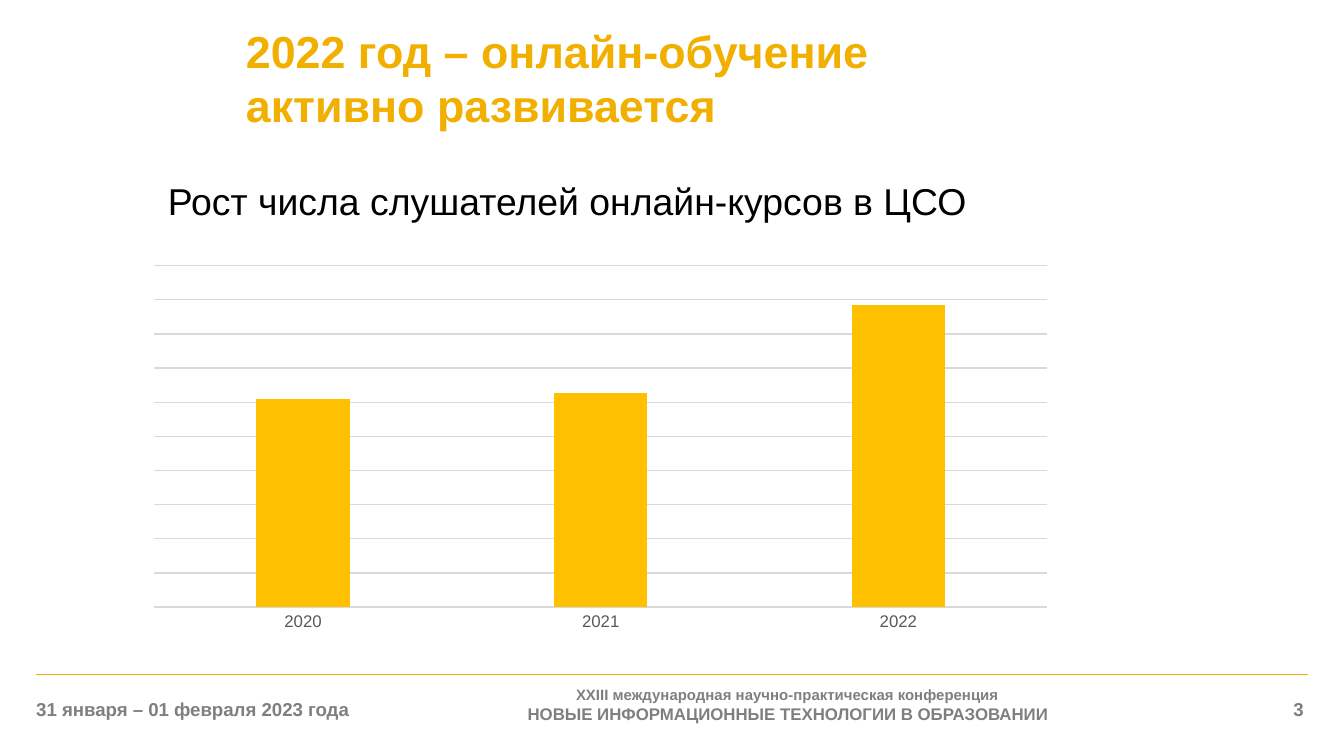
"""Build the slide on the growth of online course audiences."""
from dataclasses import dataclass

import pptx
import pptx.chart.data
import pptx.dml.color
import pptx.enum.chart
import pptx.enum.shapes
import pptx.enum.text
import pptx.oxml
import pptx.util
from pptx.util import Inches, Pt

RGBColor = pptx.dml.color.RGBColor
Align = pptx.enum.text.PP_ALIGN
Anchor = pptx.enum.text.MSO_ANCHOR

GOLD = RGBColor(0xF1, 0xAF, 0x00)
AMBER = RGBColor(0xFF, 0xC0, 0x00)
BLACK = RGBColor(0x00, 0x00, 0x00)
GRAY = RGBColor(0x7F, 0x7F, 0x7F)
AXIS_TEXT = RGBColor(0x59, 0x59, 0x59)
GRID = RGBColor(0xD9, 0xD9, 0xD9)
FONT = "Arial"


@dataclass(frozen=True)
class Label:
    text: str
    box: tuple[float, float, float, float]
    sizes: tuple[float, ...]
    color: RGBColor = GRAY
    bold: bool = True
    align: Align = Align.LEFT
    anchor: Anchor = Anchor.TOP
    insets: tuple[float, float] = (0, 0)


TITLE = Label("2022 год – онлайн-обучение активно развивается",
              (1.77, 0.17, 5.44, 0.81), (24,), GOLD,
              anchor=Anchor.MIDDLE, insets=(0.06, 0))
BODY = Label("Рост числа слушателей онлайн-курсов в ЦСО",
             (1.01, 1.28, 7.98, 3.24), (20,), BLACK, bold=False, insets=(0.1, 0.05))
FOOTERS = (
    Label("31 января – 01 февраля 2023 года", (0.27, 5.19, 2.36, 0.17), (10,),
          anchor=Anchor.MIDDLE),
    Label("XXIII международная научно-практическая конференция\v"
          "НОВЫЕ ИНФОРМАЦИОННЫЕ ТЕХНОЛОГИИ В ОБРАЗОВАНИИ",
          (2.63, 5.1, 6.46, 0.29), (8, 9), align=Align.CENTER),
    Label("3", (8.86, 5.19, 0.84, 0.17), (10,), align=Align.RIGHT),
)


def style_font(font, size: float, color: RGBColor, bold: bool = False) -> None:
    font.name = FONT
    font.size = Pt(size)
    font.bold = bold
    font.color.rgb = color


def fill_label(shape, label: Label):
    shape.left, shape.top, shape.width, shape.height = map(Inches, label.box)
    text_frame = shape.text_frame
    text_frame.word_wrap = True
    text_frame.auto_size = pptx.enum.text.MSO_AUTO_SIZE.NONE
    text_frame.vertical_anchor = label.anchor
    horizontal, vertical = map(Inches, label.insets)
    text_frame.margin_left = text_frame.margin_right = horizontal
    text_frame.margin_top = text_frame.margin_bottom = vertical
    paragraph = text_frame.paragraphs[0]
    paragraph.text = label.text
    paragraph.alignment = label.align
    for run, size in zip(paragraph.runs, label.sizes):
        style_font(run.font, size, label.color, label.bold)
    return paragraph


def add_label(slide, label: Label):
    return fill_label(slide.shapes.add_textbox(*map(Inches, label.box)), label)


def add_footer_rule(slide) -> None:
    rule = slide.shapes.add_connector(
        pptx.enum.shapes.MSO_CONNECTOR.STRAIGHT,
        Inches(0.27), Inches(5.02), Inches(9.73), Inches(5.02))
    rule.line.color.rgb = GOLD
    rule.line.width = Pt(0.75)
    properties = rule._element.spPr
    properties.append(properties.makeelement(pptx.oxml.ns.qn("a:effectLst"), {}))


def add_audience_chart(slide) -> None:
    data = pptx.chart.data.CategoryChartData()
    data.categories = ["2020", "2021", "2022"]
    data.add_series("Series 1", (69, 71, 100))
    chart = slide.shapes.add_chart(
        pptx.enum.chart.XL_CHART_TYPE.COLUMN_CLUSTERED,
        Inches(1.01), Inches(1.92), Inches(6.92), Inches(2.84), data).chart
    chart.has_legend = False
    chart.has_title = False
    style_font(chart.font, 10, BLACK)

    plot = chart.plots[0]
    plot.gap_width = 219
    plot.overlap = -27
    plot.vary_by_categories = False
    series_fill = plot.series[0].format.fill
    series_fill.solid()
    series_fill.fore_color.rgb = AMBER

    category_axis = chart.category_axis
    category_axis.major_tick_mark = pptx.enum.chart.XL_TICK_MARK.NONE
    style_font(category_axis.tick_labels.font, 9, AXIS_TEXT)
    value_axis = chart.value_axis
    value_axis.visible = False
    value_axis.minimum_scale = 0
    value_axis.maximum_scale = 113
    value_axis.major_unit = 11.3
    value_axis.has_major_gridlines = True
    for line in (category_axis.format.line, value_axis.major_gridlines.format.line):
        line.color.rgb = GRID
        line.width = Pt(0.75)


def main() -> None:
    presentation = pptx.Presentation()
    presentation.slide_width = Inches(10)
    presentation.slide_height = presentation.slide_width * 9 // 16
    slide = presentation.slides.add_slide(presentation.slide_layouts[5])
    add_footer_rule(slide)
    fill_label(slide.shapes.title, TITLE)
    body_properties = add_label(slide, BODY)._p.get_or_add_pPr()
    body_properties.set("marL", str(Inches(0.2)))
    body_properties.set("indent", str(Inches(-0.06)))
    for footer in FOOTERS:
        add_label(slide, footer)
    add_audience_chart(slide)
    presentation.save("out.pptx")


if __name__ == "__main__":
    main()
